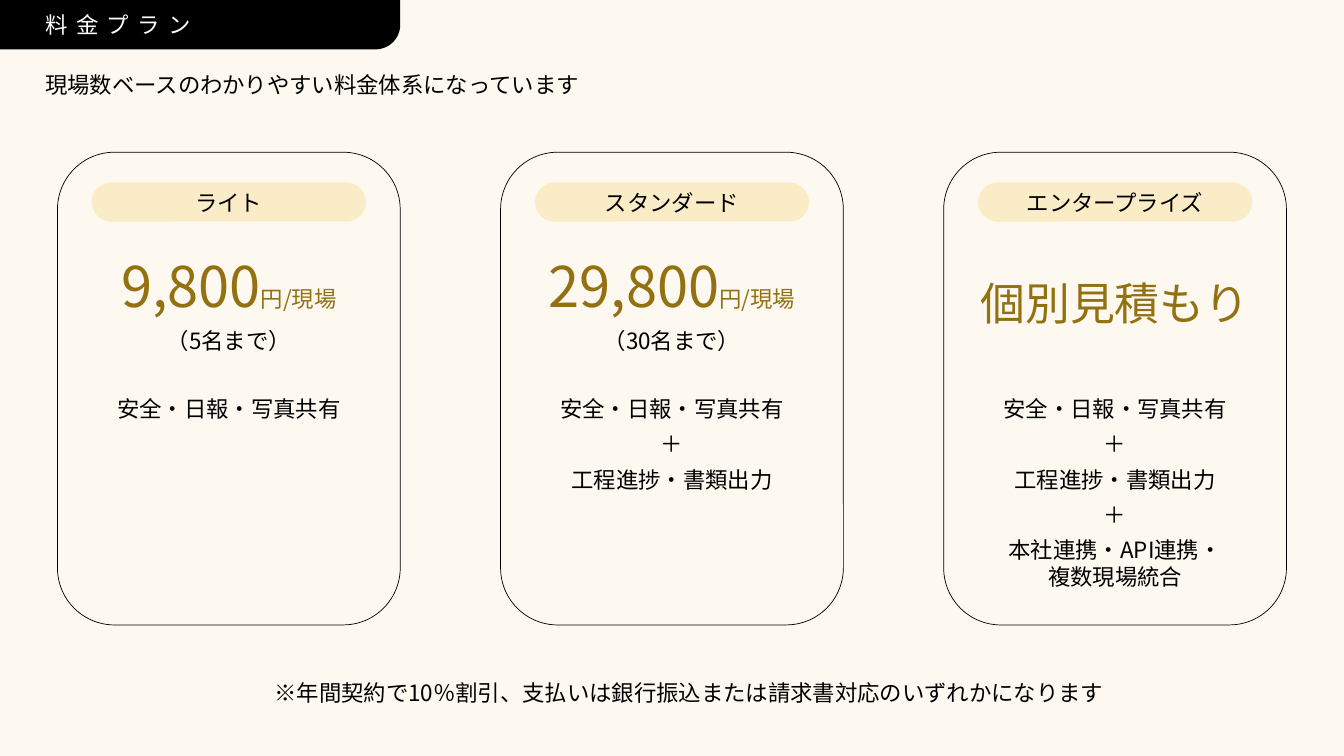
from dataclasses import dataclass

from lxml import etree
from pptx import Presentation
from pptx.dml.color import RGBColor
from pptx.enum import shapes, text
from pptx.oxml.ns import qn
from pptx.util import Inches, Pt

# Content
TITLE = "料金プラン"
LEAD = "現場数ベースのわかりやすい料金体系になっています"
NOTE = "※年間契約で10％割引、支払いは銀行振込または請求書対応のいずれかになります"
PLANS = [
    {"name": "ライト", "price": "9,800", "limit": "（5名まで）",
     "features": ["安全・日報・写真共有"]},
    {"name": "スタンダード", "price": "29,800", "limit": "（30名まで）",
     "features": ["安全・日報・写真共有", "＋", "工程進捗・書類出力"]},
    {"name": "エンタープライズ", "quote": "個別見積もり",
     "features": ["安全・日報・写真共有", "＋", "工程進捗・書類出力", "＋",
                  "本社連携・API連携・\n複数現場統合"]},
]
UNIT = "円/現場"


@dataclass(frozen=True)
class Theme:
    font: str = "Noto Sans CJK JP"
    paper: RGBColor = RGBColor(0xFD, 0xF9, 0xF1)
    ink: RGBColor = RGBColor(0, 0, 0)
    white: RGBColor = RGBColor(0xFF, 0xFF, 0xFF)
    gold: RGBColor = RGBColor(0x93, 0x71, 0x11)
    cream: RGBColor = RGBColor(0xF9, 0xEC, 0xC7)
    body: int = 16
    quote: int = 32
    price: int = 40


THEME = Theme()
LEFT, CENTER = text.PP_ALIGN.LEFT, text.PP_ALIGN.CENTER
MIDDLE, TOP = text.MSO_ANCHOR.MIDDLE, text.MSO_ANCHOR.TOP

# Card grid
CARD_LEFT, CARD_TOP, CARD_WIDTH, CARD_HEIGHT = 0.57, 1.51, 3.4, 4.69
CARD_STEP = 4.395
INNER_WIDTH, PRICE_WIDTH = 2.72, 2.99


def style_run(run, size, color):
    run.font.name = THEME.font
    run.font.size = Pt(size)
    run.font.color.rgb = color
    east_asian = etree.SubElement(run.font._element, qn("a:ea"))
    east_asian.set("typeface", THEME.font)


def write(shape, paragraphs, align=CENTER, anchor=MIDDLE):
    """Each paragraph is a list of (words, size, color) runs."""
    frame = shape.text_frame
    frame.word_wrap = True
    frame.auto_size = text.MSO_AUTO_SIZE.NONE
    frame.vertical_anchor = anchor
    frame.margin_left = frame.margin_right = Inches(0.1)
    frame.margin_top = frame.margin_bottom = Inches(0.05)
    for index, runs in enumerate(paragraphs):
        paragraph = frame.add_paragraph() if index else frame.paragraphs[0]
        paragraph.alignment = align
        paragraph.space_before = Pt(6)
        for words, size, color in runs:
            for number, line in enumerate(words.split("\n")):
                if number:
                    paragraph.add_line_break()
                run = paragraph.add_run()
                run.text = line
                style_run(run, size, color)


def plain(words, color=THEME.ink):
    return [(words, THEME.body, color)]


def add_text(slide, box, paragraphs, **layout):
    write(slide.shapes.add_textbox(*map(Inches, box)), paragraphs, **layout)


def add_block(slide, kind, box, fill=None, line=None, rounding=None):
    shape = slide.shapes.add_shape(kind, *map(Inches, box))
    shape.shadow.inherit = False
    if rounding is not None:
        shape.adjustments[0] = rounding
    if fill is None:
        shape.fill.background()
    else:
        shape.fill.solid()
        shape.fill.fore_color.rgb = fill
    if line is None:
        shape.line.fill.background()
    else:
        shape.line.color.rgb = line
        shape.line.width = Pt(0.5)
    return shape


def add_header(slide):
    band = add_block(slide, shapes.MSO_SHAPE.ROUND_1_RECTANGLE,
                     (0, 0, 3.97, 0.49), fill=THEME.ink, rounding=0.5)
    band._element.spPr.find(qn("a:xfrm")).set("flipV", "1")
    title = slide.shapes.title
    title.left, title.top, title.width, title.height = map(
        Inches, (0.35, 0, 3.62, 0.49))
    write(title, [plain(TITLE, THEME.white)], align=LEFT)
    title.text_frame.paragraphs[0].runs[0].font._element.set("spc", "600")
    band._element.addnext(title._element)  # title sits in front of the band
    add_text(slide, (0.35, 0.62, 12.52, 0.44), [plain(LEAD)], align=LEFT)


def add_plan(slide, left, plan):
    rounded = shapes.MSO_SHAPE.ROUNDED_RECTANGLE
    inner_left = left + (CARD_WIDTH - INNER_WIDTH) / 2
    price_left = left + (CARD_WIDTH - PRICE_WIDTH) / 2
    add_block(slide, rounded, (left, CARD_TOP, CARD_WIDTH, CARD_HEIGHT),
              line=THEME.ink)
    badge = add_block(slide, rounded, (inner_left, 1.81, INNER_WIDTH, 0.39),
                      fill=THEME.cream, rounding=0.5)
    write(badge, [plain(plan["name"])])
    if "quote" in plan:
        price = [[(plan["quote"], THEME.quote, THEME.gold)]]
    else:
        price = [[(plan["price"], THEME.price, THEME.gold),
                  (UNIT, THEME.body, THEME.gold)],
                 plain(plan["limit"])]
    add_text(slide, (price_left, 2.45, PRICE_WIDTH, 1.11), price)
    add_text(slide, (inner_left, 3.87, INNER_WIDTH, 1.99),
             [plain(feature) for feature in plan["features"]], anchor=TOP)


def main():
    presentation = Presentation()
    presentation.slide_width = Inches(13.33)
    presentation.slide_height = Inches(7.5)
    slide = presentation.slides.add_slide(presentation.slide_layouts[5])
    slide.background.fill.solid()
    slide.background.fill.fore_color.rgb = THEME.paper

    add_header(slide)
    for column, plan in enumerate(PLANS):
        add_plan(slide, CARD_LEFT + column * CARD_STEP, plan)
    add_text(slide, (0.91, 6.65, 11.85, 0.44), [plain(NOTE)])
    presentation.save("out.pptx")


if __name__ == "__main__":
    main()
